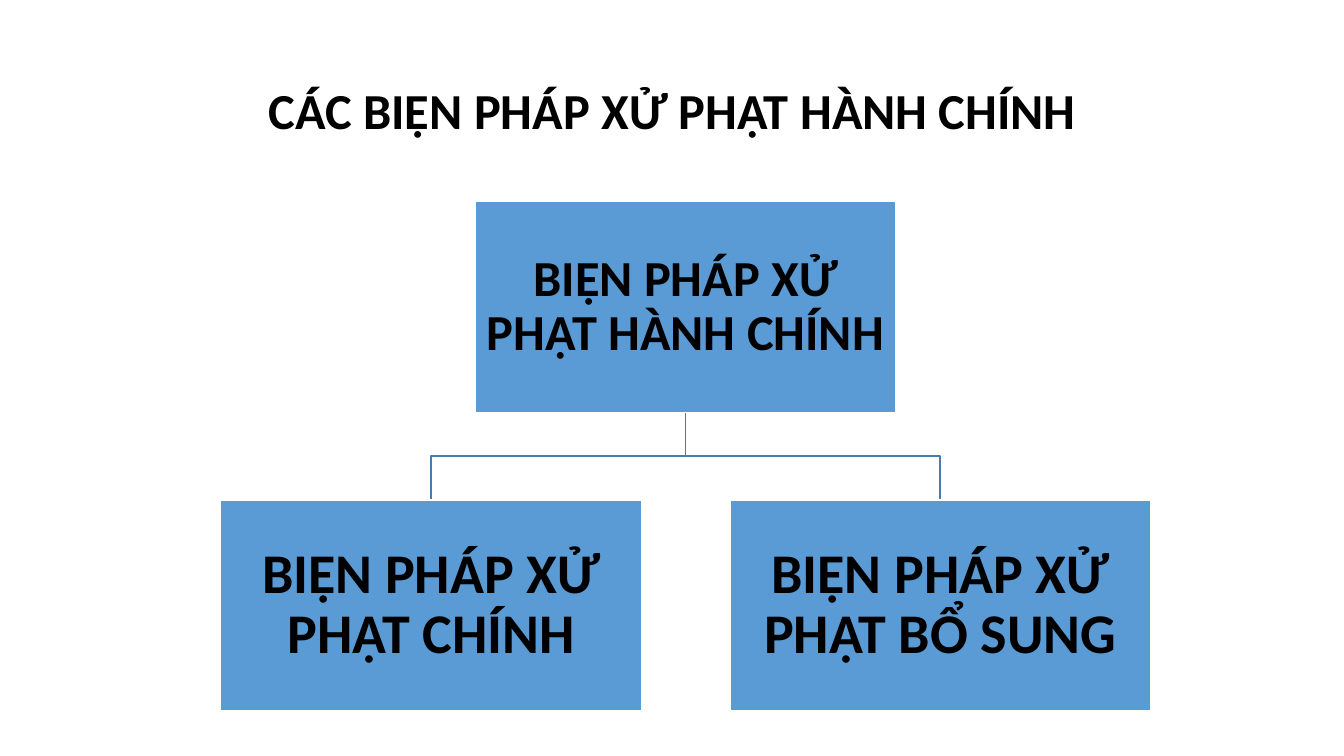
from dataclasses import dataclass

from pptx import Presentation
from pptx import util as u
from pptx.dml.color import RGBColor
from pptx.enum import shapes, text

BLUE = RGBColor(0x5B, 0x9B, 0xD5)
STEEL = RGBColor(0x49, 0x7C, 0xAB)
WHITE = RGBColor(0xFF, 0xFF, 0xFF)
BLACK = RGBColor(0x00, 0x00, 0x00)

# Chart grid, in inches: origin, pitch of columns and rows, box size
LEFT, TOP = 2.19, 2.0
COL, ROW = 5.05, 2.96
WIDE, HIGH = 4.17, 2.09


@dataclass
class Box:
    label: str
    col: float
    row: int
    size: int

    @property
    def x(self) -> float:
        return LEFT + self.col * COL

    @property
    def y(self) -> float:
        return TOP + self.row * ROW

    @property
    def mid(self) -> float:
        return self.x + WIDE / 2


ROOT = Box("BIỆN PHÁP XỬ PHẠT HÀNH CHÍNH", 0.5, 0, 36)
LEAVES = [
    Box("BIỆN PHÁP XỬ PHẠT CHÍNH", 0, 1, 40),
    Box("BIỆN PHÁP XỬ PHẠT BỔ SUNG", 1, 1, 40),
]


def write(shape, words: str, *, size: int, inset: float | None = None) -> None:
    frame = shape.text_frame
    frame.word_wrap = True
    frame.auto_size = text.MSO_AUTO_SIZE.NONE
    frame.vertical_anchor = text.MSO_ANCHOR.MIDDLE
    if inset is not None:
        frame.margin_left = frame.margin_right = u.Inches(inset)
        frame.margin_top = frame.margin_bottom = u.Inches(inset)
    para = frame.paragraphs[0]
    para.alignment = text.PP_ALIGN.CENTER
    para.line_spacing = 0.9
    run = para.add_run()
    run.text = words
    run.font.name = "Calibri"
    run.font.size = u.Pt(size)
    run.font.bold = True
    run.font.color.rgb = BLACK


def outline(shape, color: RGBColor) -> None:
    shape.shadow.inherit = False
    shape.line.color.rgb = color
    shape.line.width = u.Pt(1)


def draw_box(slide, box: Box) -> None:
    rect = slide.shapes.add_shape(
        shapes.MSO_SHAPE.RECTANGLE,
        u.Inches(box.x), u.Inches(box.y), u.Inches(WIDE), u.Inches(HIGH))
    rect.fill.solid()
    rect.fill.fore_color.rgb = BLUE
    outline(rect, WHITE)
    write(rect, box.label, size=box.size, inset=0.03)


def draw_branch(slide, top: Box, leaf: Box) -> None:
    start = top.y + HIGH
    bend = (start + leaf.y) / 2
    points = [(top.mid, bend), (leaf.mid, bend), (leaf.mid, leaf.y)]
    path = slide.shapes.build_freeform(u.Inches(top.mid), u.Inches(start))
    path.add_line_segments(
        [(u.Inches(x), u.Inches(y)) for x, y in points], close=False)
    branch = path.convert_to_shape()
    branch.fill.background()
    outline(branch, STEEL)


def main() -> None:
    deck = Presentation()
    deck.slide_width, deck.slide_height = u.Inches(13.33), u.Inches(7.5)
    slide = deck.slides.add_slide(deck.slide_layouts.get_by_name("Title Only"))

    # Title
    title = slide.shapes.title
    title.left, title.top = u.Inches(0.92), u.Inches(0.4)
    title.width, title.height = u.Inches(11.5), u.Inches(1.45)
    write(title, "CÁC BIỆN PHÁP XỬ PHẠT HÀNH CHÍNH", size=36)

    # Branches lie behind the boxes
    for leaf in reversed(LEAVES):
        draw_branch(slide, ROOT, leaf)
    for box in [ROOT, *LEAVES]:
        draw_box(slide, box)

    deck.save("out.pptx")


if __name__ == "__main__":
    main()
